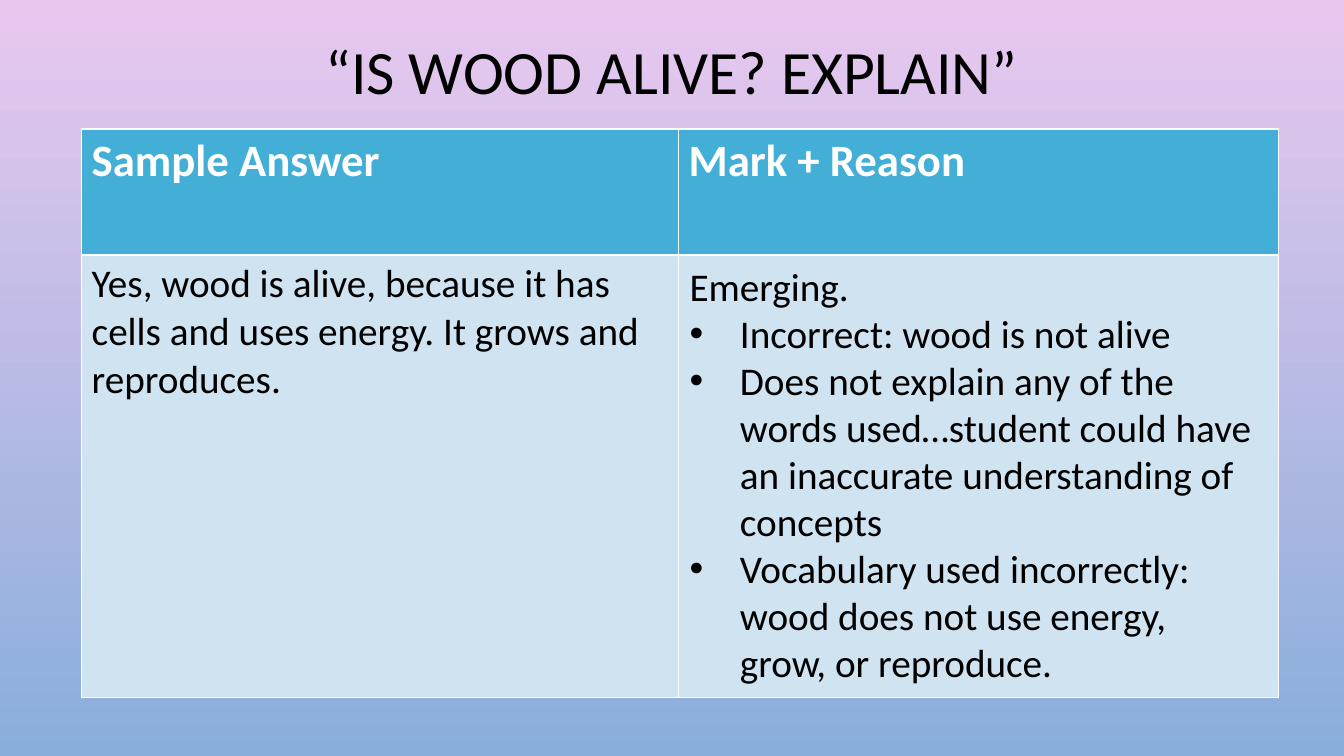
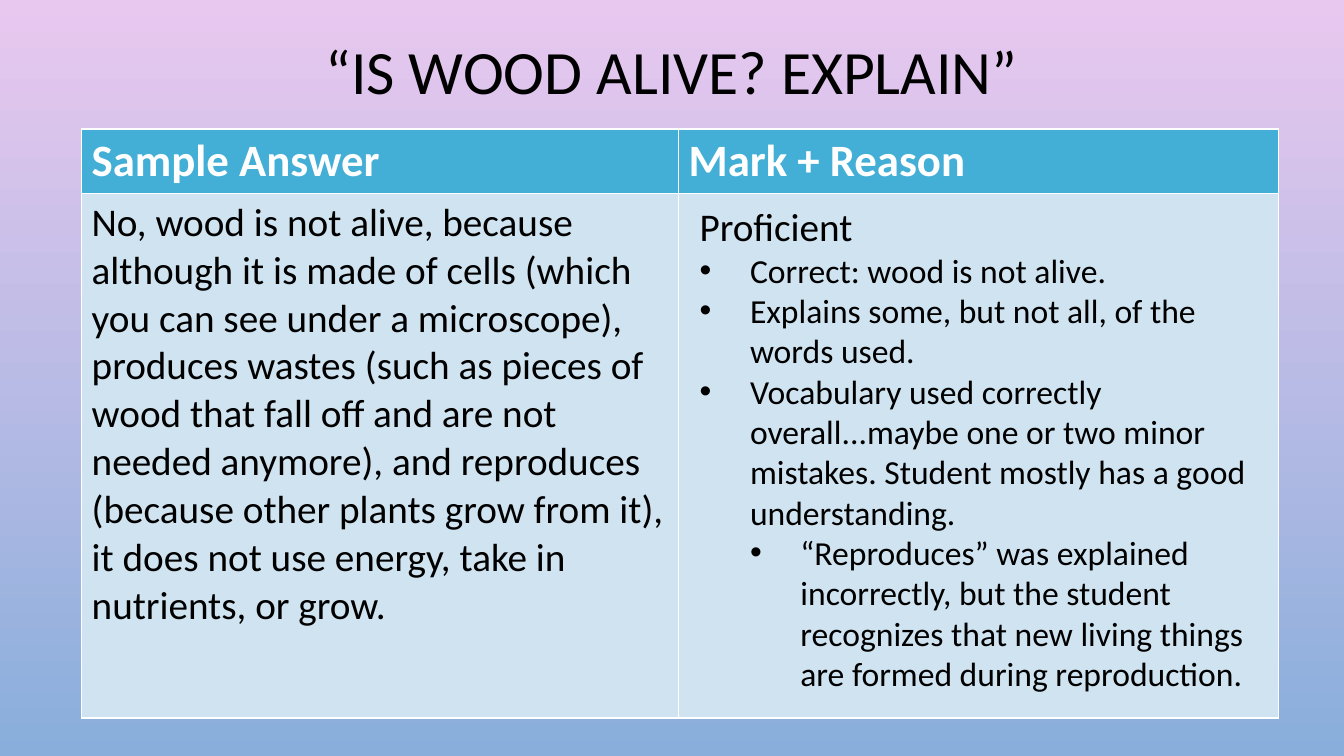
from lxml.etree import SubElement
from pptx import Presentation
from pptx.dml.color import RGBColor
from pptx.enum.text import MSO_ANCHOR, MSO_AUTO_SIZE, PP_ALIGN
from pptx.oxml.ns import qn
from pptx.util import Inches, Pt

FONT = "Calibri"
BLACK = RGBColor(0x00, 0x00, 0x00)
WHITE = RGBColor(0xFF, 0xFF, 0xFF)
PINK = RGBColor(0xE9, 0xC8, 0xEF)
BLUE = RGBColor(0x89, 0xAE, 0xDB)
HEADER_FILL = RGBColor(0x43, 0xAF, 0xD6)
BODY_FILL = RGBColor(0xCF, 0xE3, 0xF0)

TITLE = "“IS WOOD ALIVE? EXPLAIN”"
HEADERS = ("Sample Answer", "Mark + Reason")
TITLE_BOX = (1, -0.14, 11.33, 1.75)
TABLE_LEFT, TABLE_TOP = 0.81, 1.28
COLUMN_WIDTHS = (5.92, 5.95)
INDENT = 0.5

# Each reason is (bullet level, text).
SAMPLES = [
    {
        "answer": "Yes, wood is alive, because it has cells and uses energy. "
                  "It grows and reproduces.",
        "row_heights": (1.25, 4.39),
        "mark": "Emerging.",
        "reasons": [
            (0, "Incorrect: wood is not alive"),
            (0, "Does not explain any of the words used…student could have "
                "an inaccurate understanding of concepts"),
            (0, "Vocabulary used incorrectly: wood does not use energy, "
                "grow, or reproduce."),
        ],
        "reason_size": 28,
        "mark_box": (6.74, 2.55, 5.78, 4.34),
    },
    {
        "answer": "No, wood is not alive, because although it is made of cells "
                  "(which you can see under a microscope), produces wastes "
                  "(such as pieces of wood that fall off and are not needed "
                  "anymore), and reproduces (because other plants grow from "
                  "it), it does not use energy, take in nutrients, or grow.",
        "row_heights": (0.61, 5.2),
        "mark": "Proficient",
        "reasons": [
            (0, "Correct: wood is not alive."),
            (0, "Explains some, but not all, of the words used."),
            (0, "Vocabulary used correctly overall...maybe one or two minor "
                "mistakes. Student mostly has a good understanding."),
            (1, "“Reproduces” was explained incorrectly, but the student "
                "recognizes that new living things are formed during "
                "reproduction."),
        ],
        "reason_size": 24,
        "mark_box": (6.84, 1.96, 5.68, 5.02),
    },
]


def set_background(master):
    fill = master.background.fill
    fill.gradient()
    fill.gradient_angle = 270
    for stop, color in zip(fill.gradient_stops, (PINK, BLUE)):
        stop.color.rgb = color


def format_text(paragraph, size, color=BLACK, bold=False):
    for run in paragraph.runs:
        run.font.name = FONT
        run.font.size = Pt(size)
        run.font.bold = bold
        run.font.color.rgb = color


def add_bullet(paragraph, level):
    paragraph.level = level
    properties = paragraph._p.get_or_add_pPr()
    properties.set("marL", str(Inches(INDENT * (level + 1))))
    properties.set("indent", str(-Inches(INDENT)))
    SubElement(properties, qn("a:buFont")).set("typeface", "Arial")
    SubElement(properties, qn("a:buChar")).set("char", "•")


def place_title(slide, box):
    title = slide.shapes.title
    title.left, title.top, title.width, title.height = map(Inches, box)
    text_frame = title.text_frame
    text_frame.text = TITLE
    text_frame.vertical_anchor = MSO_ANCHOR.MIDDLE
    paragraph = text_frame.paragraphs[0]
    paragraph.alignment = PP_ALIGN.CENTER
    paragraph.line_spacing = 0.9
    format_text(paragraph, 44)


def fill_cell(cell, text, fill_color, size, color, bold):
    cell.fill.solid()
    cell.fill.fore_color.rgb = fill_color
    cell.text_frame.text = text
    format_text(cell.text_frame.paragraphs[0], size, color, bold)


def add_answer_table(slide, left, top, row_heights, answer):
    table = slide.shapes.add_table(
        2, 2, Inches(left), Inches(top),
        Inches(sum(COLUMN_WIDTHS)), Inches(sum(row_heights))).table
    for column, width in zip(table.columns, COLUMN_WIDTHS):
        column.width = Inches(width)
    for row, height in zip(table.rows, row_heights):
        row.height = Inches(height)
    for index, header in enumerate(HEADERS):
        fill_cell(table.cell(0, index), header, HEADER_FILL, 32, WHITE, True)
    for index, text in enumerate((answer, "")):
        fill_cell(table.cell(1, index), text, BODY_FILL, 28, BLACK, False)


def add_mark(slide, box, mark, reasons, reason_size):
    text_frame = slide.shapes.add_textbox(*map(Inches, box)).text_frame
    text_frame.word_wrap = True
    text_frame.auto_size = MSO_AUTO_SIZE.SHAPE_TO_FIT_TEXT
    text_frame.text = mark
    format_text(text_frame.paragraphs[0], 28)
    for level, reason in reasons:
        paragraph = text_frame.add_paragraph()
        paragraph.text = reason
        add_bullet(paragraph, level)
        format_text(paragraph, reason_size)


def add_sample_slide(presentation, sample):
    slide = presentation.slides.add_slide(presentation.slide_layouts[5])
    place_title(slide, TITLE_BOX)
    add_answer_table(slide, TABLE_LEFT, TABLE_TOP,
                     sample["row_heights"], sample["answer"])
    add_mark(slide, sample["mark_box"], sample["mark"],
             sample["reasons"], sample["reason_size"])


def main():
    presentation = Presentation()
    presentation.slide_width = Inches(13.33)
    presentation.slide_height = Inches(7.5)
    set_background(presentation.slide_master)
    for sample in SAMPLES:
        add_sample_slide(presentation, sample)
    presentation.save("out.pptx")


if __name__ == "__main__":
    main()
